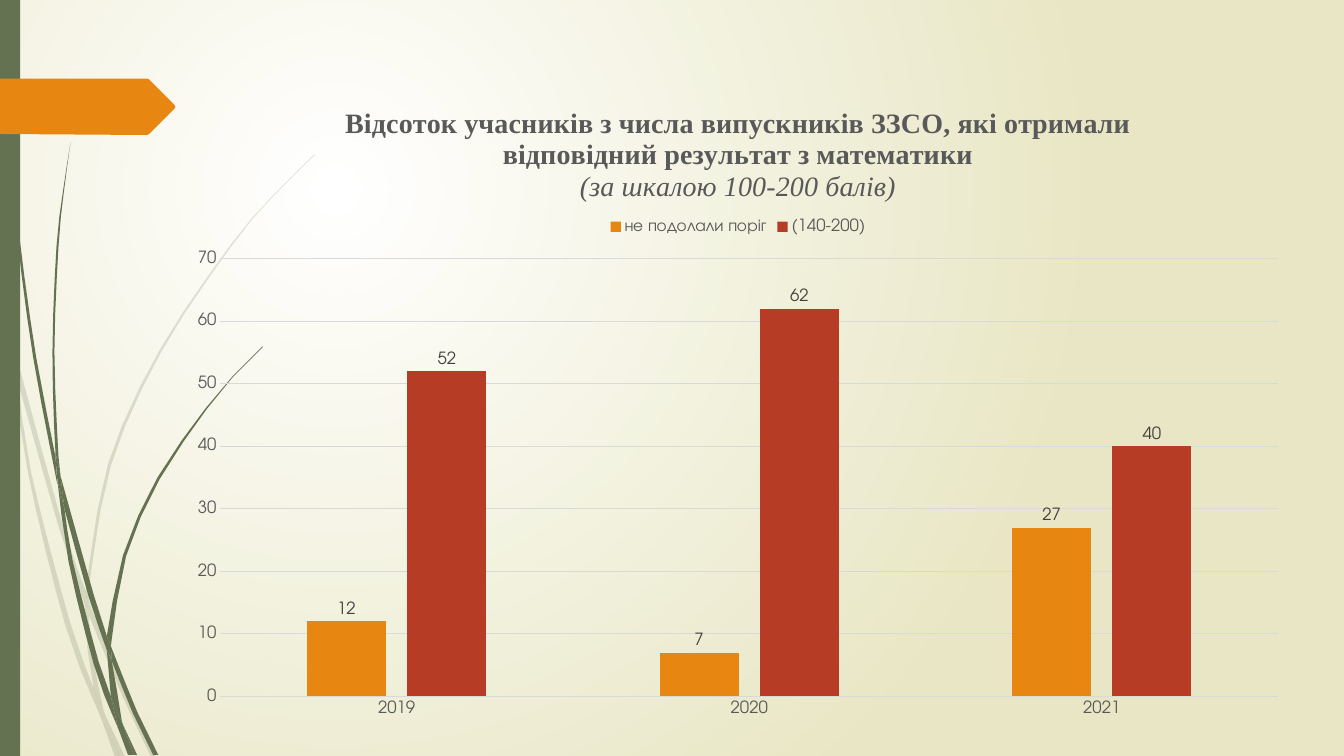
from dataclasses import dataclass
from math import dist

from lxml.etree import SubElement
from pptx import Presentation
from pptx.chart.data import CategoryChartData
from pptx.dml.color import RGBColor
from pptx.enum.chart import XL_CHART_TYPE as ChartType
from pptx.enum.chart import XL_LABEL_POSITION as LabelPosition
from pptx.enum.chart import XL_LEGEND_POSITION as LegendPosition
from pptx.enum.chart import XL_TICK_MARK as TickMark
from pptx.enum.shapes import MSO_SHAPE
from pptx.oxml import parse_xml
from pptx.oxml.ns import nsdecls, qn
from pptx.util import Pt

TITLE = [
    # text, bold, italic
    ("Відсоток учасників з числа випускників ЗЗСО, які отримали "
     "відповідний результат з математики", True, False),
    ("(за шкалою 100-200 балів)", False, True),
]
YEARS = ["2019", "2020", "2021"]
RESULTS = {"не подолали поріг": (12, 7, 27), "(140-200)": (52, 62, 40)}

PX = 9144  # one hundredth of an inch
SLIDE = (1333, 750)
CHART_BOX = (174, 84, 1116, 639)
PLOT = {"x": 0.04, "y": 0.27, "w": 0.94, "h": 0.68}  # shares of the chart box
SIDE_BAR = (0, 0, 20, 750)
TAG = [(0, 78), (146, 78), (148, 79), (173, 104), (174, 106), (173, 108),
       (148, 133), (146, 134), (0, 133)]
CHORD = 50  # longest straight step along a blade

# Each blade of grass is one edge followed by the edge that leads back.
PALE_GRASS = [
    ([(11, 350), (9, 322), (0, 282)], [(0, 299), (10, 344), (11, 350)]),
    ([(14, 345), (62, 520), (85, 586)], [(84, 599), (58, 522), (17, 376)]),
    ([(88, 596), (92, 607), (127, 692), (155, 751)],
     [(150, 751), (123, 694), (88, 610)]),
    ([(105, 711), (124, 751)], [(119, 751), (105, 711)]),
    ([(11, 350), (17, 376), (31, 469), (70, 619), (93, 683), (101, 714)],
     [(101, 714), (92, 693), (65, 621), (28, 470), (11, 350)]),
    ([(84, 599), (88, 610), (91, 646), (103, 706), (105, 711)],
     [(105, 711), (96, 692), (93, 683), (87, 646), (84, 599)]),
    ([(85, 586), (107, 461), (158, 348), (228, 244), (268, 197), (312, 153)],
     [(312, 154), (268, 198), (229, 245), (160, 349), (110, 462), (88, 584),
      (88, 596)]),
    ([(101, 714), (119, 751)], [(114, 751), (101, 714)]),
    ([(85, 586), (88, 596), (88, 610)], [(88, 608), (84, 599)]),
    ([(93, 683), (96, 692), (105, 711), (119, 751)],
     [(119, 751), (101, 714), (93, 683)]),
]
DARK_GRASS = [
    ([(4, 0), (8, 109), (19, 232), (36, 355), (55, 453), (57, 481)],
     [(57, 481), (33, 355), (17, 233), (7, 110), (3, 0)]),
    ([(60, 472), (93, 590), (106, 631)], [(106, 645), (88, 592), (64, 505)]),
    ([(110, 641), (136, 706), (157, 749)], [(152, 749), (132, 708), (111, 656)]),
    ([(57, 477), (64, 505), (72, 556), (98, 657), (110, 691), (117, 722)],
     [(117, 722), (111, 708), (93, 659), (68, 557), (57, 477)]),
    ([(70, 141), (63, 193), (58, 245), (54, 349), (58, 453), (60, 472)],
     [(60, 472), (55, 449), (52, 349), (56, 245), (62, 193), (70, 141)]),
    ([(122, 719), (136, 749)], [(133, 749), (122, 719)]),
    ([(55, 449), (60, 472), (64, 505)], [(64, 505), (57, 477), (55, 453)]),
    ([(260, 344), (231, 373), (204, 405), (156, 474), (122, 551), (106, 631)],
     [(110, 641), (111, 633), (125, 552), (158, 476), (205, 406), (231, 374),
      (261, 344)]),
    ([(117, 722), (131, 749)], [(127, 749), (117, 722)]),
    ([(106, 645), (111, 656), (121, 716), (122, 719)],
     [(122, 719), (116, 706), (110, 691), (106, 645)]),
    ([(106, 631), (110, 641), (111, 656)], [(109, 651), (106, 645)]),
    ([(110, 691), (116, 706), (122, 719), (133, 749)],
     [(130, 749), (117, 722), (110, 691)]),
]


@dataclass(frozen=True)
class Theme:
    white: str = "FFFFFF"
    sand: str = "E8E6C4"
    green: str = "647252"
    orange: str = "E78712"
    red: str = "B73C26"
    gray: str = "595959"
    label: str = "404040"
    grid: str = "D9D9D9"
    body_font: str = "TeX Gyre Adventor"
    title_font: str = "Times New Roman"
    body_size: int = 12
    title_size: int = 20


THEME = Theme()


def rgb(code):
    return RGBColor.from_string(code)


def set_font(font, color, name=THEME.body_font, size=THEME.body_size):
    font.name, font.size, font.color.rgb = name, Pt(size), rgb(color)


def paint(shape, color, alpha=None):
    shape.shadow.inherit = False
    shape.line.fill.background()
    shape.fill.solid()
    shape.fill.fore_color.rgb = rgb(color)
    if alpha:
        tone = shape.fill._xPr.find(".//" + qn("a:srgbClr"))
        SubElement(tone, qn("a:alpha"), val=str(alpha * 1000))


def smooth(edge):
    """Catmull-Rom curve through the points of an edge."""
    curve = [edge[0]]
    padded = [edge[0], *edge, edge[-1]]
    for a, b, c, d in zip(padded, padded[1:], padded[2:], padded[3:]):
        steps = int(dist(b, c) // CHORD) + 1
        for step in range(1, steps + 1):
            t = step / steps
            curve.append(tuple(
                q + t * (r - p + t * (2 * p - 5 * q + 4 * r - s
                                      + t * (3 * q - p - 3 * r + s))) / 2
                for p, q, r, s in zip(a, b, c, d)))
    return curve


def add_outline(page, points, color, alpha=None):
    points = [(round(x * PX), round(y * PX)) for x, y in points]
    builder = page.shapes.build_freeform(*points[0])
    builder.add_line_segments(points[1:])
    paint(builder.convert_to_shape(), color, alpha)


def fill_background(page):
    """Radial gradient centred a quarter of the way in from the top left."""
    stops = "".join(f'<a:gs pos="{pos}"><a:srgbClr val="{color}"/></a:gs>'
                    for pos, color in ((0, THEME.white), (100000, THEME.sand)))
    page.background.fill.solid()
    props = page.background._cSld.bg.bgPr
    props.replace(props[0], parse_xml(
        f'<a:gradFill {nsdecls("a")} rotWithShape="1"><a:gsLst>{stops}</a:gsLst>'
        '<a:path path="circle"><a:fillToRect l="50000" t="50000" r="100000" '
        'b="100000"/></a:path></a:gradFill>'))


def add_results_chart(page):
    data = CategoryChartData()
    data.categories = YEARS
    for name, values in RESULTS.items():
        data.add_series(name, values)
    chart = page.shapes.add_chart(
        ChartType.COLUMN_CLUSTERED, *(n * PX for n in CHART_BOX), data).chart
    set_font(chart.font, THEME.gray)

    frame = chart.chart_title.text_frame
    for index, (text, bold, italic) in enumerate(TITLE):
        para = frame.add_paragraph() if index else frame.paragraphs[0]
        span = para.add_run()
        span.text = text
        for font in (para.font, span.font):
            set_font(font, THEME.gray, THEME.title_font, THEME.title_size)
            font.bold, font.italic = bold, italic
    chart.chart_title.include_in_layout = False

    chart.has_legend = True
    chart.legend.position = LegendPosition.TOP
    chart.legend.include_in_layout = False
    set_font(chart.legend.font, THEME.gray)

    for axis in (chart.category_axis, chart.value_axis):
        axis.major_tick_mark = axis.minor_tick_mark = TickMark.NONE
        set_font(axis.tick_labels.font, THEME.gray)
    chart.value_axis.minimum_scale, chart.value_axis.maximum_scale = 0, 70
    chart.value_axis.major_unit = 10
    chart.value_axis.format.line.fill.background()
    for line in (chart.category_axis.format.line,
                 chart.value_axis.major_gridlines.format.line):
        line.color.rgb, line.width = rgb(THEME.grid), Pt(0.75)

    plot = chart.plots[0]
    plot.gap_width, plot.overlap, plot.vary_by_categories = 219, -27, False
    for series, color in zip(plot.series, (THEME.orange, THEME.red)):
        series.format.fill.solid()
        series.format.fill.fore_color.rgb = rgb(color)
        labels = series.data_labels
        labels.show_value, labels.position = True, LabelPosition.OUTSIDE_END
        set_font(labels.font, THEME.label)

    area = chart._chartSpace.chart.plotArea
    for old in area.findall(qn("c:layout")):
        area.remove(old)
    shares = "".join(f'<c:{key} val="{share}"/>' for key, share in PLOT.items())
    area.insert(0, parse_xml(
        f'<c:layout {nsdecls("c")}><c:manualLayout><c:layoutTarget val="inner"/>'
        f'<c:xMode val="edge"/><c:yMode val="edge"/>{shares}</c:manualLayout></c:layout>'))


def main():
    deck = Presentation()
    deck.slide_width, deck.slide_height = (n * PX for n in SLIDE)
    page = deck.slides.add_slide(deck.slide_layouts.get_by_name("Blank"))
    fill_background(page)
    for blades, alpha in ((PALE_GRASS, 20), (DARK_GRASS, None)):
        for there, back in blades:
            add_outline(page, smooth(there) + smooth(back), THEME.green, alpha)
    bar = page.shapes.add_shape(MSO_SHAPE.RECTANGLE, *(n * PX for n in SIDE_BAR))
    paint(bar, THEME.green)
    add_outline(page, TAG, THEME.orange)
    add_results_chart(page)
    deck.save("out.pptx")


if __name__ == "__main__":
    main()
